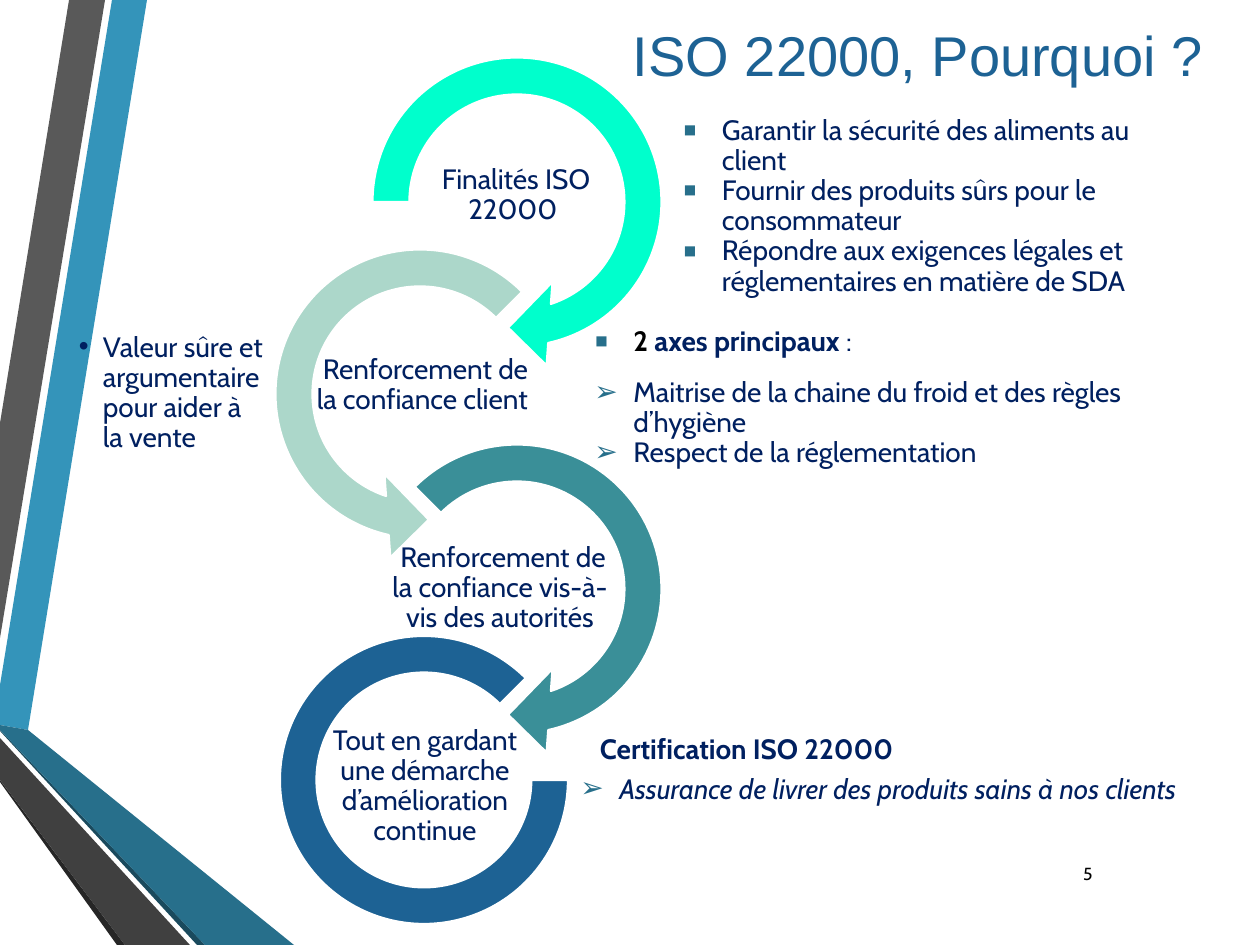
import pptx
import pptx.dml.color
import pptx.enum.shapes
import pptx.enum.text
import pptx.util
from pptx.oxml.ns import qn
from lxml import etree

PX = 914400 / 126
NAVY, TEAL, WHITE, BLACK = "002060", "276F8B", "FFFFFF", "000000"
SHAPE = pptx.enum.shapes.MSO_SHAPE
ALIGN = pptx.enum.text.PP_ALIGN
ANCHOR = pptx.enum.text.MSO_ANCHOR
BODY = {"name": "Cabin", "size": 16, "color": NAVY}
SQUARE = {"char": "▪", "indent": 39, "color": TEAL, "size": 145}
ARROW = {"char": "➢", "indent": 39, "color": TEAL}
DOT = {"char": "•", "indent": 24, "color": NAVY}

RIBBONS = [
    ("3494BA", [(0, 685), (0, 725), (28, 730), (147, 0), (112, 0)]),
    ("595959", [(105, 0), (69, 0), (0, 423), (0, 638)]),
    ("262626", [(0, 780), (0, 782), (117, 945), (125, 945)]),
    ("1A4A5D", [(0, 730), (0, 731), (197, 945), (205, 945)]),
    (TEAL, [(0, 730), (205, 945), (294, 945), (28, 730), (0, 725)]),
    ("404040", [(0, 780), (125, 945), (190, 945), (0, 738)]),
]
RINGS = [
    (SHAPE.CIRCULAR_ARROW, (349, 34, 336, 336), "00FFCC", (0.11, 11.42, 45, 108, 0.125)),
    (SHAPE.LEFT_CIRCULAR_ARROW, (252, 226, 336, 336), "ACD7CA", (0.11, 11.42, 63, 189, 0.125)),
    (SHAPE.CIRCULAR_ARROW, (349, 421, 336, 336), "3A8F98", (0.11, 11.42, 45, 135, 0.125)),
    (SHAPE.BLOCK_ARC, (280, 636, 288, 288), "1D6294", (0, 189, 0.127)),
]
RING_LABELS = [
    ((422, 149, 188, 93), "Finalités ISO 22000 "),
    ((314, 339, 223, 93), "Renforcement de la confiance client "),
    ((383, 542, 234, 93), " Renforcement de la confiance vis-à-vis des autorités"),
    ((331, 740, 188, 93), "Tout en gardant une démarche d’amélioration continue"),
]
GOALS = [
    "Garantir la sécurité des aliments au client",
    "Fournir des produits sûrs pour le consommateur",
    "Répondre aux exigences légales et réglementaires en matière de SDA",
]


def px(n):
    return pptx.util.Emu(round(n * PX))


def rgb(value):
    return pptx.dml.color.RGBColor.from_string(value)


def place(sp, box):
    for name, n in zip(("left", "top", "width", "height"), box):
        setattr(sp, name, px(n))


def set_frame(sp, anchor=ANCHOR.TOP, margin=None):
    """Set wrapping, anchor and an optional equal margin in px."""
    tf = sp.text_frame
    values = {"word_wrap": True, "vertical_anchor": anchor,
              "auto_size": pptx.enum.text.MSO_AUTO_SIZE.NONE}
    if margin is not None:
        sides = ("left", "top", "right", "bottom")
        values.update({f"margin_{side}": px(margin) for side in sides})
    for name, value in values.items():
        setattr(tf, name, value)
    return tf


def add_box(s, box, **frame):
    return set_frame(s.shapes.add_textbox(*map(px, box)), **frame)


def set_bullet(p, char, indent, color, size=100):
    pPr = p._p.get_or_add_pPr()
    pPr.set("marL", str(px(indent)))
    pPr.set("indent", str(-px(indent)))
    clr = etree.SubElement(pPr, qn("a:buClr"))
    etree.SubElement(clr, qn("a:srgbClr"), val=color)
    etree.SubElement(pPr, qn("a:buSzPct"), val=str(size * 1000))
    etree.SubElement(pPr, qn("a:buFont"), typeface="Arial")
    etree.SubElement(pPr, qn("a:buChar"), char=char)


def write(tf, runs, bullet=None, align=ALIGN.LEFT, spacing=0.9, before=0):
    """Append a paragraph of (text, format changes) runs."""
    p = tf.paragraphs[0]
    if p.runs:
        p = tf.add_paragraph()
    if bullet:
        set_bullet(p, **bullet)
    values = {"alignment": align, "line_spacing": spacing,
              "space_before": pptx.util.Pt(before), "space_after": pptx.util.Pt(0)}
    for name, value in values.items():
        setattr(p, name, value)
    for text, changes in runs:
        r = p.add_run()
        r.text = text
        fmt = {**BODY, **changes}
        r.font.color.rgb = rgb(fmt.pop("color"))
        fmt["size"] = pptx.util.Pt(fmt["size"])
        for name, value in fmt.items():
            setattr(r.font, name, value)


def add_ribbon(s, color, points):
    builder = s.shapes.build_freeform(*points[0], scale=PX)
    builder.add_line_segments(points[1:], close=True)
    sp = builder.convert_to_shape()
    sp.shadow.inherit = False
    sp.fill.solid()
    sp.fill.fore_color.rgb = rgb(color)
    sp.line.fill.background()


def add_ring(s, kind, box, color, adjustments):
    sp = s.shapes.add_shape(kind, *map(px, box))
    sp.shadow.inherit = False
    for i, value in enumerate(adjustments):
        sp.adjustments[i] = value
    sp.fill.solid()
    sp.fill.fore_color.rgb = rgb(color)
    sp.line.color.rgb = rgb(WHITE)
    sp.line.width = pptx.util.Pt(1.25)


def main():
    prs = pptx.Presentation()
    prs.slide_width, prs.slide_height = px(1260), px(945)
    s = prs.slides.add_slide(prs.slide_layouts[1])

    for ribbon in RIBBONS:
        add_ribbon(s, *ribbon)

    title, body = s.placeholders
    place(title, (171, 6, 1045, 96))
    write(set_frame(title, anchor=ANCHOR.MIDDLE),
          [("ISO 22000, Pourquoi ?", {"name": "Arial", "size": 32, "color": "1D6294"})],
          align=ALIGN.RIGHT, spacing=1.0)

    place(body, (682, 79, 504, 255))
    tf = set_frame(body, anchor=ANCHOR.MIDDLE, margin=1)
    for goal in GOALS:
        write(tf, [(goal, {})], bullet=SQUARE)

    for ring in RINGS:
        add_ring(s, *ring)
    for box, label in RING_LABELS:
        tf = add_box(s, box, anchor=ANCHOR.MIDDLE, margin=1)
        write(tf, [(label, {})], align=ALIGN.CENTER)

    tf = add_box(s, (78, 273, 189, 241), anchor=ANCHOR.MIDDLE, margin=1)
    write(tf, [("Valeur sûre et argumentaire pour aider à la vente", {})], bullet=DOT)

    tf = add_box(s, (582, 321, 625, 190))
    write(tf, [("2 ", {"color": BLACK, "bold": True}),
               ("axes principaux ", {"bold": True}), (":", {})], bullet=SQUARE)
    write(tf, [("Maitrise de la chaine du froid et des règles d’hygiène", {})],
          bullet=ARROW, before=12)
    write(tf, [("Respect de la réglementation", {})], bullet=ARROW)

    tf = add_box(s, (600, 732, 295, 50), margin=0)
    write(tf, [("Certification ISO 22000", {"bold": True})], spacing=1.0)
    tf = add_box(s, (568, 765, 627, 67))
    write(tf, [("Assurance de livrer des produits sains à nos clients", {"italic": True})],
          bullet=ARROW, spacing=1.0)

    tf = add_box(s, (1048, 849, 57, 50), anchor=ANCHOR.MIDDLE)
    write(tf, [("5", {"size": 10, "color": BLACK})], align=ALIGN.RIGHT, spacing=1.0)

    prs.save("out.pptx")


if __name__ == "__main__":
    main()
